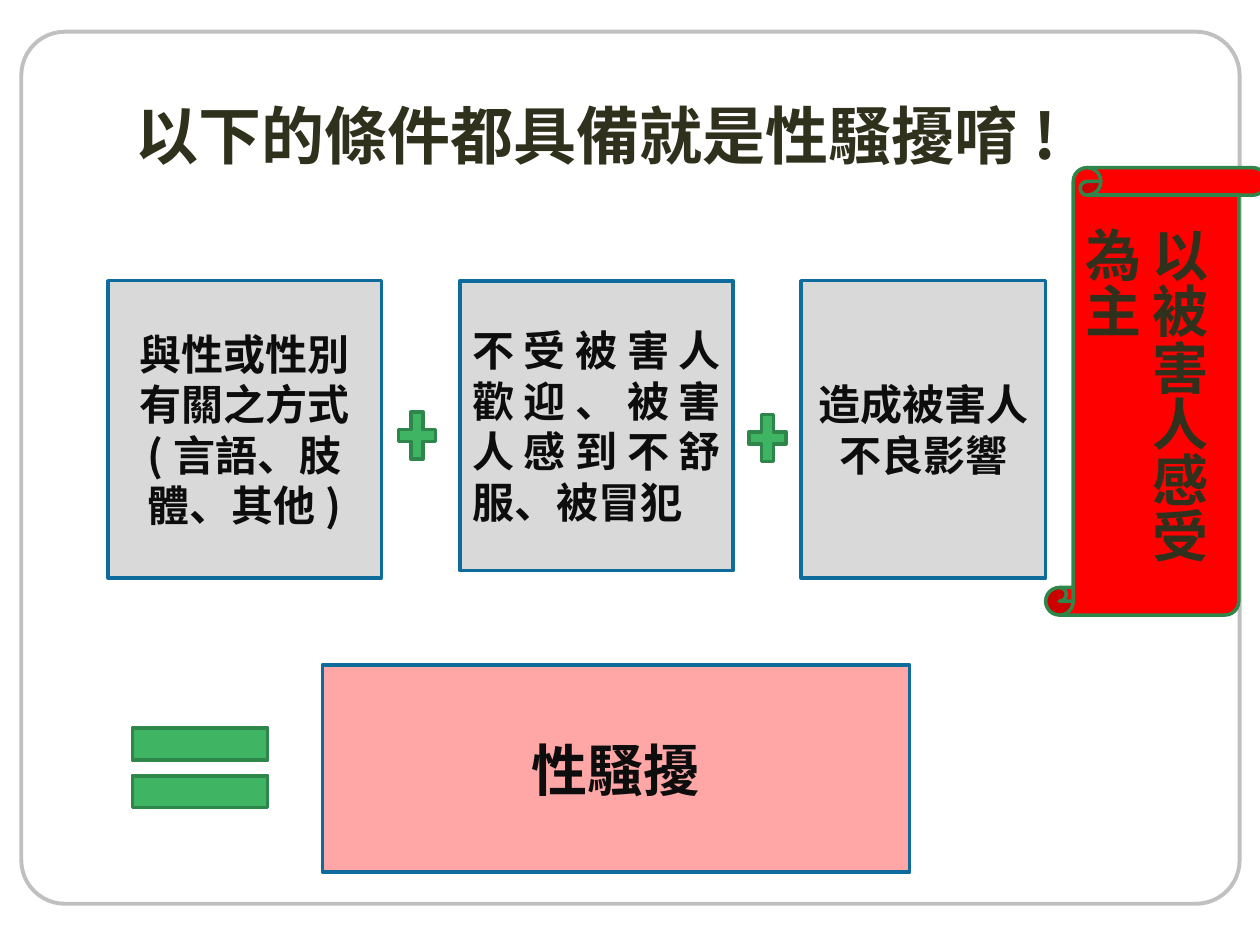
from dataclasses import dataclass

from lxml import etree
from pptx import Presentation
from pptx.dml.color import RGBColor
from pptx.enum.shapes import MSO_SHAPE
from pptx.enum.text import MSO_ANCHOR, MSO_AUTO_SIZE, PP_ALIGN
from pptx.oxml.ns import qn
from pptx.util import Cm, Pt

RECT, ROUND = MSO_SHAPE.RECTANGLE, MSO_SHAPE.ROUNDED_RECTANGLE
PLUS, EQUAL = MSO_SHAPE.MATH_PLUS, MSO_SHAPE.MATH_EQUAL
SCROLL = MSO_SHAPE.VERTICAL_SCROLL
LEFT, MID, FULL = PP_ALIGN.LEFT, PP_ALIGN.CENTER, PP_ALIGN.JUSTIFY
TOP, CENTER = MSO_ANCHOR.TOP, MSO_ANCHOR.MIDDLE
NO_FIT = MSO_AUTO_SIZE.NONE

GRAY = RGBColor(0xD9, 0xD9, 0xD9)
SILVER = RGBColor(0xC0, 0xC0, 0xC0)
BLUE = RGBColor(0x0D, 0x6C, 0x9C)
GREEN = RGBColor(0x3F, 0xB5, 0x64)
DARK = RGBColor(0x2F, 0x86, 0x4A)
PINK = RGBColor(0xFF, 0xA7, 0xA7)
RED = RGBColor(0xFF, 0x00, 0x00)
INK = RGBColor(0x0D, 0x0D, 0x0D)
OLIVE = RGBColor(0x30, 0x31, 0x1D)
CJK = "Noto Sans CJK SC"


@dataclass
class Area:
    x: float
    y: float
    w: float
    h: float


@dataclass
class Sign:
    kind: int
    area: Area
    fill: RGBColor = GREEN


def place(shape, area: Area) -> None:
    shape.left, shape.top = Cm(area.x), Cm(area.y)
    shape.width, shape.height = Cm(area.w), Cm(area.h)


def paint(shape, fill=None, line=BLUE, width=2) -> None:
    if fill is None:
        shape.fill.background()
    else:
        shape.fill.solid()
        shape.fill.fore_color.rgb = fill
    shape.line.color.rgb = line
    shape.line.width = Pt(width)


def draw(slide, kind: int, area: Area, **look):
    shape = slide.shapes.add_shape(
        kind, Cm(area.x), Cm(area.y), Cm(area.w), Cm(area.h))
    shape.shadow.inherit = False
    paint(shape, **look)
    return shape


def write(shape, text: str, size=24, color=INK, font=CJK, align=MID,
          anchor=CENTER, pad=0.25, before=0) -> None:
    frame = shape.text_frame
    frame.word_wrap, frame.auto_size = True, NO_FIT
    frame.vertical_anchor = anchor
    frame.margin_left = frame.margin_right = Cm(pad)
    frame.margin_top = frame.margin_bottom = Cm(0.13)
    frame.text = text
    for para in frame.paragraphs:
        para.alignment = align
        para.space_before, para.space_after = Pt(before), Pt(0)
        para.line_spacing = Pt(size * 1.2)
        for run in para.runs:
            run.font.size, run.font.bold = Pt(size), True
            run.font.color.rgb, run.font.name = color, font
            east = etree.SubElement(run.font._element, qn("a:ea"))
            east.set("typeface", CJK)


def shade(run) -> None:
    """Give the letters a shadow, placed just after their fill."""
    props = run.font._element
    effects = etree.Element(qn("a:effectLst"))
    cast = etree.SubElement(effects, qn("a:outerShdw"), dist="38100",
                            dir="2700000", algn="tl")
    etree.SubElement(cast, qn("a:srgbClr"), val=str(OLIVE))
    props.find(qn("a:solidFill")).addnext(effects)


def unlist(para) -> None:
    """Take the bullet and indent off a body paragraph."""
    props = para._p.get_or_add_pPr()
    props.set("marL", "0")
    props.set("indent", "0")
    etree.SubElement(props, qn("a:buNone"))


def main() -> None:
    deck = Presentation()
    deck.slide_width, deck.slide_height = Cm(25.4), Cm(19.05)
    slide = deck.slides.add_slide(deck.slide_layouts[1])

    # Frame
    frame = draw(slide, ROUND, Area(0.43, 0.64, 24.56, 17.58),
                 line=SILVER, width=2.25)
    frame.adjustments[0] = 0.05

    # Title
    title = slide.shapes.title
    place(title, Area(2.49, 1.98, 21.41, 1.47))
    write(title, "以下的條件都具備就是性騷擾唷!", size=36, color=OLIVE,
          align=LEFT)
    shade(title.text_frame.paragraphs[0].runs[0])

    # Three conditions
    top = 5.66
    means = draw(slide, RECT, Area(2.18, top, 5.51, 5.99), fill=GRAY)
    write(means, "與性或性別有關之方式\n(言語、肢體、其他)", pad=0.43)

    body = slide.placeholders[1]
    place(body, Area(9.27, top, 5.51, 5.84))
    paint(body, fill=GRAY)
    write(body, "不受被害人歡迎、被害人感到不舒服、被冒犯", align=FULL)
    unlist(body.text_frame.paragraphs[0])

    harm = draw(slide, RECT, Area(16.15, top, 4.93, 5.99), fill=GRAY)
    write(harm, "造成被害人不良影響", before=6)

    # Signs and scroll
    signs = [
        Sign(PLUS, Area(7.9, 8.13, 1.02, 1.3)),
        Sign(PLUS, Area(14.96, 8.18, 1.02, 1.3)),
        Sign(EQUAL, Area(2.18, 14.12, 3.71, 2.72)),
        Sign(SCROLL, Area(21.08, 3.38, 4.45, 9.02), RED),
    ]
    for sign in signs:
        draw(slide, sign.kind, sign.area, fill=sign.fill, line=DARK)

    # Result
    result = draw(slide, RECT, Area(6.5, 13.41, 11.84, 4.17), fill=PINK)
    write(result, "性騷擾", size=32, before=6)

    # Vertical note on the scroll
    note = slide.shapes.add_textbox(Cm(21.31), Cm(4.34), Cm(3.25), Cm(7.67))
    write(note, "以被害人感受為主", size=32, color=OLIVE, font="Arial",
          align=LEFT, anchor=TOP)
    note.text_frame._txBody.bodyPr.set("vert", "eaVert")
    note.text_frame.margin_top = note.text_frame.margin_bottom = Cm(0.25)
    note.text_frame.margin_left = note.text_frame.margin_right = Cm(0.13)

    deck.save("out.pptx")


if __name__ == "__main__":
    main()
